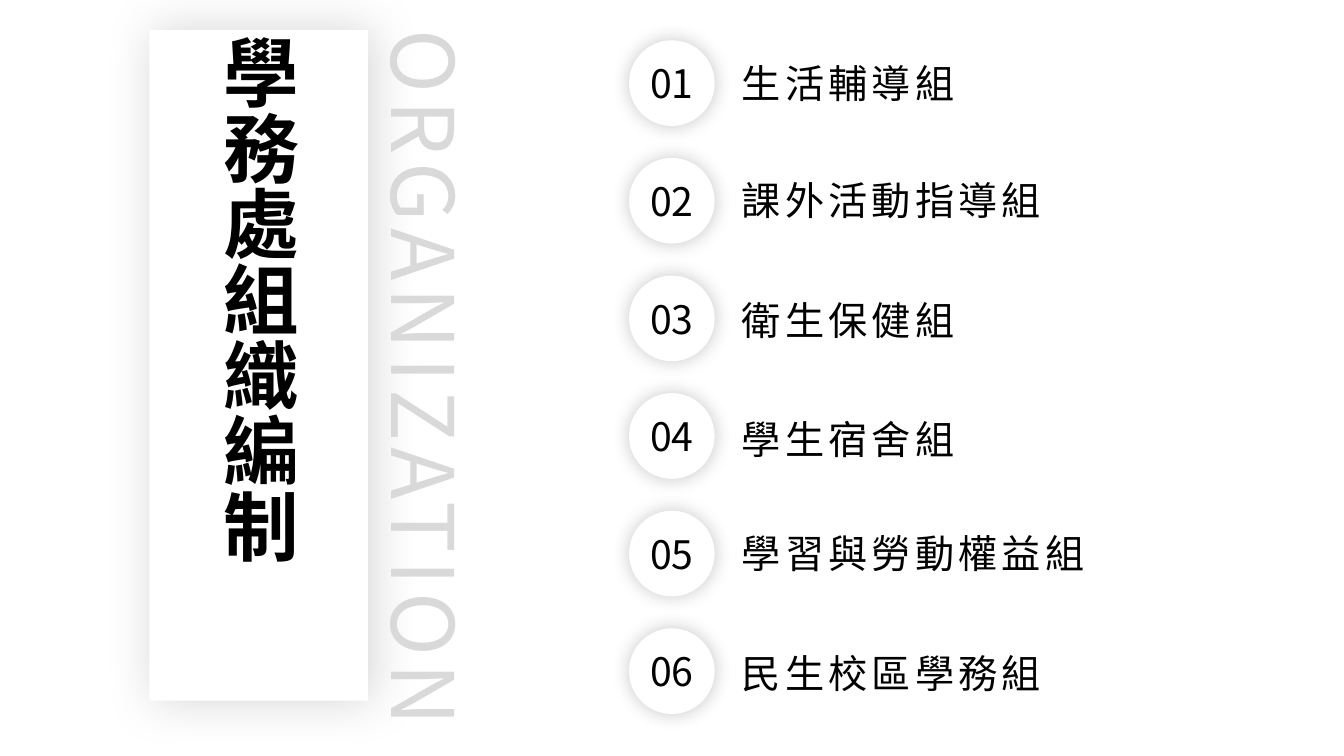
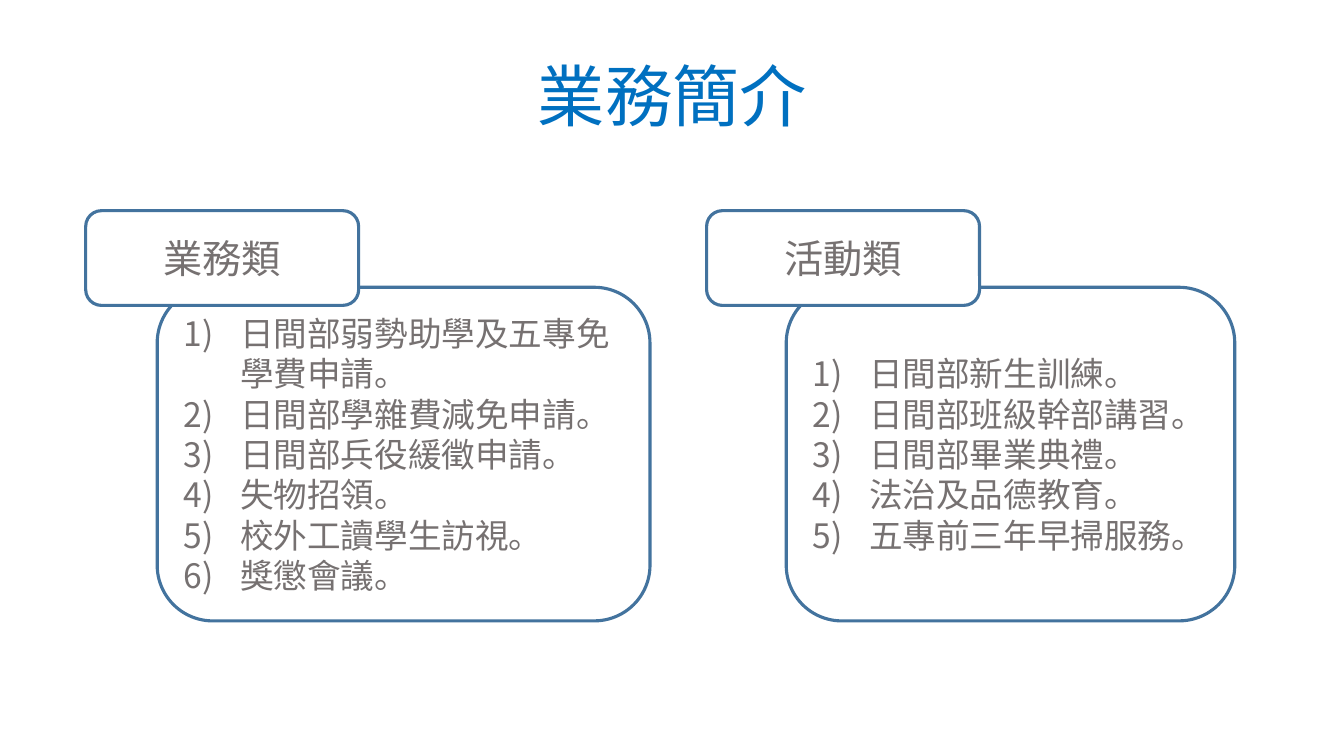
"""Build two slides on the student affairs office: its sections and its duties."""
from lxml.etree import SubElement
from pptx import Presentation
from pptx.dml.color import RGBColor
from pptx.enum.shapes import MSO_SHAPE
from pptx.enum.text import MSO_ANCHOR, MSO_AUTO_SIZE, PP_ALIGN
from pptx.oxml.ns import qn
from pptx.util import Pt

COLORS = {
    "white": "FFFFFF",
    "black": "000000",
    "pale": "D9D9D9",
    "title": "0070C0",
    "text": "767171",
    "border": "43739E",
}
LINE_HEIGHT = 1.2
CENTER = {"alignment": PP_ALIGN.CENTER}
LEFT = {"alignment": PP_ALIGN.LEFT}
JUSTIFY = {"alignment": PP_ALIGN.JUSTIFY}
MIDDLE = {
    "word_wrap": True,
    "auto_size": MSO_AUTO_SIZE.NONE,
    "vertical_anchor": MSO_ANCHOR.MIDDLE,
}
GROWING = {"word_wrap": True, "auto_size": MSO_AUTO_SIZE.SHAPE_TO_FIT_TEXT}
BADGE = MIDDLE | {
    "word_wrap": False,
    "margin_left": 0,
    "margin_right": 0,
    "margin_top": 0,
    "margin_bottom": 0,
}

SECTIONS = [
    ("生活輔導組", 39),
    ("課外活動指導組", 122.4),
    ("衛生保健組", 208),
    ("學生宿舍組", 293),
    ("學習與勞動權益組", 374.4),
    ("民生校區學務組", 460),
]
DUTIES = [
    ("業務類", 61.2, 112.3, 352, [
        "日間部弱勢助學及五專免學費申請。",
        "日間部學雜費減免申請。",
        "日間部兵役緩徵申請。",
        "失物招領。",
        "校外工讀學生訪視。",
        "獎懲會議。",
    ]),
    ("活動類", 504.7, 561.6, 320.4, [
        "日間部新生訓練。",
        "日間部班級幹部講習。",
        "日間部畢業典禮。",
        "法治及品德教育。",
        "五專前三年早掃服務。",
    ]),
]


def apply(target, values):
    for name, value in values.items():
        setattr(target, name, value)


def color(name):
    return RGBColor.from_string(COLORS[name])


class Builder:
    def __init__(self):
        self.deck = Presentation()
        apply(self.deck, {"slide_width": Pt(960), "slide_height": Pt(540)})
        self.slide = None

    def start(self, text, place, size, tint, paragraph=CENTER, **style):
        self.slide = self.deck.slides.add_slide(self.deck.slide_layouts[5])
        title = self.slide.shapes.title
        for name, value in zip(("left", "top", "width", "height"), place):
            setattr(title, name, Pt(value))
        self.set_text(title, [text], size, tint, MIDDLE, paragraph, **style)
        return title

    def set_text(self, box, lines, size, tint, frame, paragraph,
                 face="Noto Sans CJK JP", bold=False, spacing=0,
                 numbered=False):
        apply(box.text_frame, frame)
        font = {"name": face, "size": Pt(size), "bold": bold}
        for index, line in enumerate(lines):
            para = (box.text_frame.add_paragraph() if index
                    else box.text_frame.paragraphs[0])
            apply(para, paragraph | {"line_spacing": Pt(size * LINE_HEIGHT)})
            if numbered:
                properties = para._p.get_or_add_pPr()
                properties.set("marL", str(Pt(40.5)))
                properties.set("indent", str(Pt(-40.5)))
                SubElement(properties, qn("a:buFont"), typeface=face)
                SubElement(properties, qn("a:buAutoNum"), type="arabicParenR")
            span = para.add_run()
            span.text = line
            apply(span.font, font)
            span.font.color.rgb = color(tint)
            run_properties = span._r.get_or_add_rPr()
            if spacing:
                run_properties.set("spc", str(spacing * 100))
            SubElement(run_properties, qn("a:ea"), typeface=face)

    def label(self, text, place, size, tint, paragraph, spacing):
        box = self.slide.shapes.add_textbox(*map(Pt, place))
        self.set_text(box, [text], size, tint, GROWING, paragraph,
                      spacing=spacing)
        return box

    def shape(self, kind, place, fill=None, border=None):
        box = self.slide.shapes.add_shape(kind, *map(Pt, place))
        box.shadow.inherit = False
        self.fill(box, fill)
        if border:
            box.line.color.rgb = color(border)
            box.line.width = Pt(2.25)
        else:
            box.line.fill.background()
        return box

    def fill(self, box, tint):
        if tint:
            box.fill.solid()
            box.fill.fore_color.rgb = color(tint)
        else:
            box.fill.background()

    def shadow(self, box, opacity, blur, distance):
        box.shadow.inherit = False
        effects = box._element.spPr.find(qn("a:effectLst"))
        outer = SubElement(effects, qn("a:outerShdw"), blurRad=str(Pt(blur)),
                           dist=str(Pt(distance)), dir="0", algn="ctr",
                           rotWithShape="0")
        tone = SubElement(outer, qn("a:srgbClr"), val=COLORS["black"])
        SubElement(tone, qn("a:alpha"), val=str(opacity * 1000))

    def section(self, number, name, label_top):
        top = 28.8 + 84 * (number - 1)
        circle = self.shape(MSO_SHAPE.OVAL, (449.3, top, 61.2, 61.2), "white")
        self.shadow(circle, 22, 14, 0)
        self.set_text(circle, [f"{number:02}"], 28, "black", BADGE, CENTER)
        self.label(name, (522.7, label_top, 303, 41), 28, "black", LEFT, 3)

    def duty(self, name, heading_left, panel_left, panel_width, items):
        panel = self.shape(MSO_SHAPE.ROUNDED_RECTANGLE,
                           (panel_left, 205.2, panel_width, 238.3),
                           border="border")
        self.set_text(panel, items, 24, "text", MIDDLE, LEFT, numbered=True)
        heading = self.shape(MSO_SHAPE.ROUNDED_RECTANGLE,
                             (heading_left, 150.5, 195, 67.7),
                             "white", "border")
        self.set_text(heading, [name], 28, "text", MIDDLE, CENTER)


def main():
    builder = Builder()

    banner = builder.start("學務處組織編制", (106.6, 21.6, 156.2, 478.8), 54,
                           "black", JUSTIFY, face="Noto Sans CJK SC", bold=True)
    banner.text_frame._txBody.bodyPr.set("vert", "eaVert")
    builder.fill(banner, "white")
    builder.shadow(banner, 16, 36, 3)
    caption = builder.label("ORGANIZATION", (30.2, 229, 547.2, 82), 61.5,
                            "pale", CENTER, 5)
    caption.rotation = 90
    for number, (name, label_top) in enumerate(SECTIONS, 1):
        builder.section(number, name, label_top)

    builder.start("業務簡介", (227.5, 38.2, 505.4, 58.3), 48, "title")
    for duty in DUTIES:
        builder.duty(*duty)

    builder.deck.save("out.pptx")


if __name__ == "__main__":
    main()
